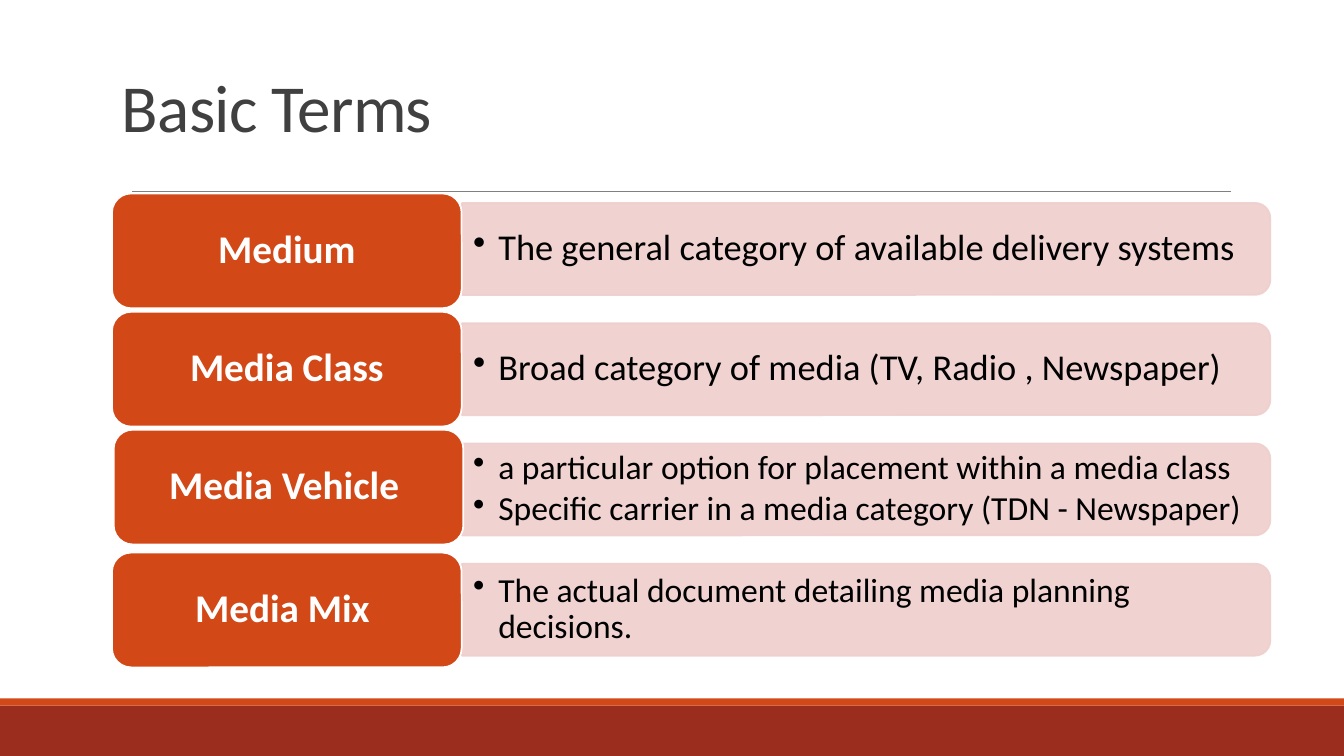
from lxml import etree
from pptx import Presentation
from pptx.dml.color import RGBColor
from pptx.enum.shapes import MSO_CONNECTOR, MSO_SHAPE
from pptx.enum.text import MSO_ANCHOR, PP_ALIGN
from pptx.oxml.ns import qn
from pptx.util import Pt

RECTANGLE = MSO_SHAPE.RECTANGLE
ROUNDED = MSO_SHAPE.ROUNDED_RECTANGLE
TWO_ROUNDED = MSO_SHAPE.ROUND_2_SAME_RECTANGLE
STRAIGHT = MSO_CONNECTOR.STRAIGHT
MIDDLE, BOTTOM = MSO_ANCHOR.MIDDLE, MSO_ANCHOR.BOTTOM
LEFT, CENTER = PP_ALIGN.LEFT, PP_ALIGN.CENTER

COLORS = {
    "title": "404040",
    "rule": "808080",
    "band": "9B2D1F",
    "accent": "D34817",
    "panel": "EFCFCC",
    "white": "FFFFFF",
    "black": "000000",
}

TERMS = [
    ("Medium", 80, 138.2, 26,
     ["The general category of available delivery systems"]),
    ("Media Class", 80, 222.7, 26,
     ["Broad category of media (TV, Radio , Newspaper)"]),
    ("Media Vehicle ", 81.2, 306.9, 24,
     ["a particular option for placement within a media class",
      "Specific carrier in a media category (TDN - Newspaper)"]),
    ("Media Mix ", 80, 394.7, 24,
     ["The actual document detailing media planning decisions."]),
]


class SlideBuilder:
    def __init__(self, page, font, colors):
        self.page = page
        self.font = font
        self.colors = colors

    def color(self, name):
        return RGBColor.from_string(self.colors[name])

    def apply(self, target, values):
        for name, value in values.items():
            setattr(target, name, value)

    def shape(self, kind, left, top, width, height, fill, line=None):
        box = self.page.shapes.add_shape(
            kind, Pt(left), Pt(top), Pt(width), Pt(height))
        box.shadow.inherit = False
        box.fill.solid()
        box.fill.fore_color.rgb = self.color(fill)
        if line:
            box.line.color.rgb = self.color(line)
            box.line.width = Pt(1.25)
        else:
            box.line.fill.background()
        return box

    def panel(self, left, middle, width, height):
        box = self.shape(TWO_ROUNDED, left + (width - height) / 2,
                         middle - width / 2, height, width, "panel", "panel")
        box.rotation = 90
        for color in box._element.spPr.iter(qn("a:srgbClr")):
            etree.SubElement(color, qn("a:alpha"), val="90000")

    def rule(self, left, right, y):
        line = self.page.shapes.add_connector(
            STRAIGHT, Pt(left), Pt(y), Pt(right), Pt(y))
        line.line.color.rgb = self.color("rule")
        line.line.width = Pt(0.5)
        etree.SubElement(line._element.spPr, qn("a:effectLst"))

    def text_box(self, left, top, width, height):
        return self.page.shapes.add_textbox(
            Pt(left), Pt(top), Pt(width), Pt(height))

    def add_text(self, box, lines, size, color, anchor=MIDDLE, align=LEFT,
                 bold=False, spacing=0.9, inset=(7.2, 3.6), after=0,
                 bullet=False, tracking=0):
        frame = box.text_frame
        side, edge = Pt(inset[0]), Pt(inset[1])
        self.apply(frame, {
            "word_wrap": True, "vertical_anchor": anchor,
            "margin_left": side, "margin_right": side,
            "margin_top": edge, "margin_bottom": edge})
        for index, line in enumerate(lines):
            para = frame.add_paragraph() if index else frame.paragraphs[0]
            self.apply(para, {"alignment": align, "line_spacing": spacing,
                              "space_after": Pt(after)})
            if bullet:
                properties = para._p.get_or_add_pPr()
                properties.set("marL", str(Pt(18)))
                properties.set("indent", str(-Pt(18)))
                etree.SubElement(properties, qn("a:buChar"), char="•")
            span = para.add_run()
            span.text = line
            self.apply(span.font, {"name": self.font, "size": Pt(size),
                                   "bold": bold})
            span.font.color.rgb = self.color(color)
            if tracking:
                span._r.get_or_add_rPr().set("spc", str(tracking))


def main():
    deck = Presentation()
    deck.slide_width, deck.slide_height = Pt(960), Pt(540)
    page = deck.slides.add_slide(deck.slide_layouts[6])
    builder = SlideBuilder(page, "Calibri", COLORS)

    builder.shape(RECTANGLE, 0, 504, 960, 36, "band")
    builder.shape(RECTANGLE, 0, 498.8, 960, 5.2, "accent")
    builder.rule(94.3, 879.1, 136.8)
    title = builder.text_box(80, 22.6, 798.5, 85.4)
    builder.add_text(title, ["Basic Terms"], 48, "title", anchor=BOTTOM,
                     spacing=0.85, tracking=-50)

    first_middle, row_step = 177.8, 85.9
    for row, (term, left, top, size, meanings) in enumerate(TERMS):
        middle = first_middle + row * row_step
        builder.panel(330, middle, 577.4, 65.7)
        meaning = builder.text_box(330, middle - 29.6, 574.6, 59.2)
        builder.add_text(meaning, meanings, size, "black", inset=(7.9, 3.6),
                         after=0.15 * size, bullet=True)
        label = builder.shape(ROUNDED, left, top, 249.8, 82,
                              "accent", "white")
        builder.add_text(label, [term], 28, "white", align=CENTER, bold=True,
                         inset=(12.6, 8.3))

    deck.save("out.pptx")


if __name__ == "__main__":
    main()
